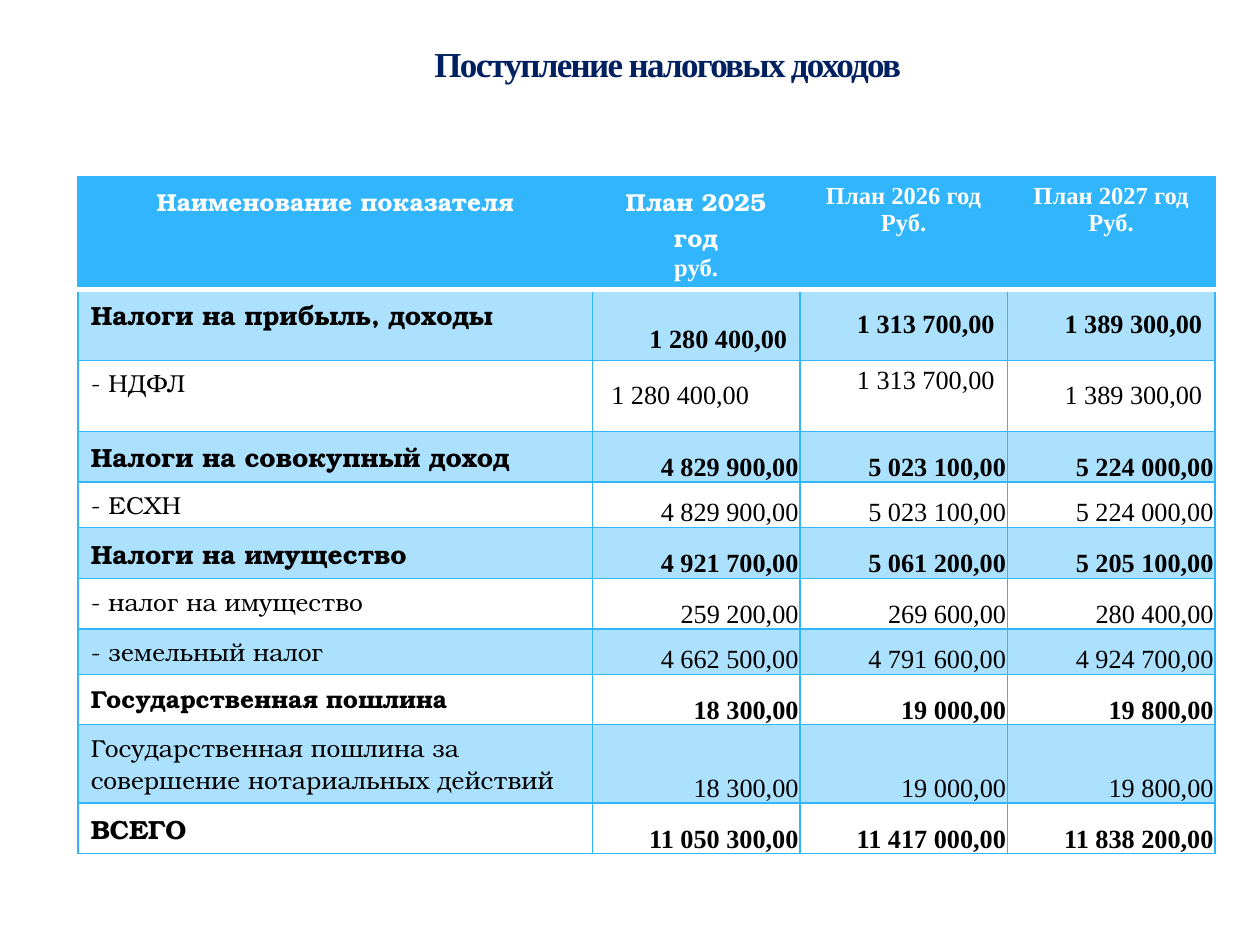
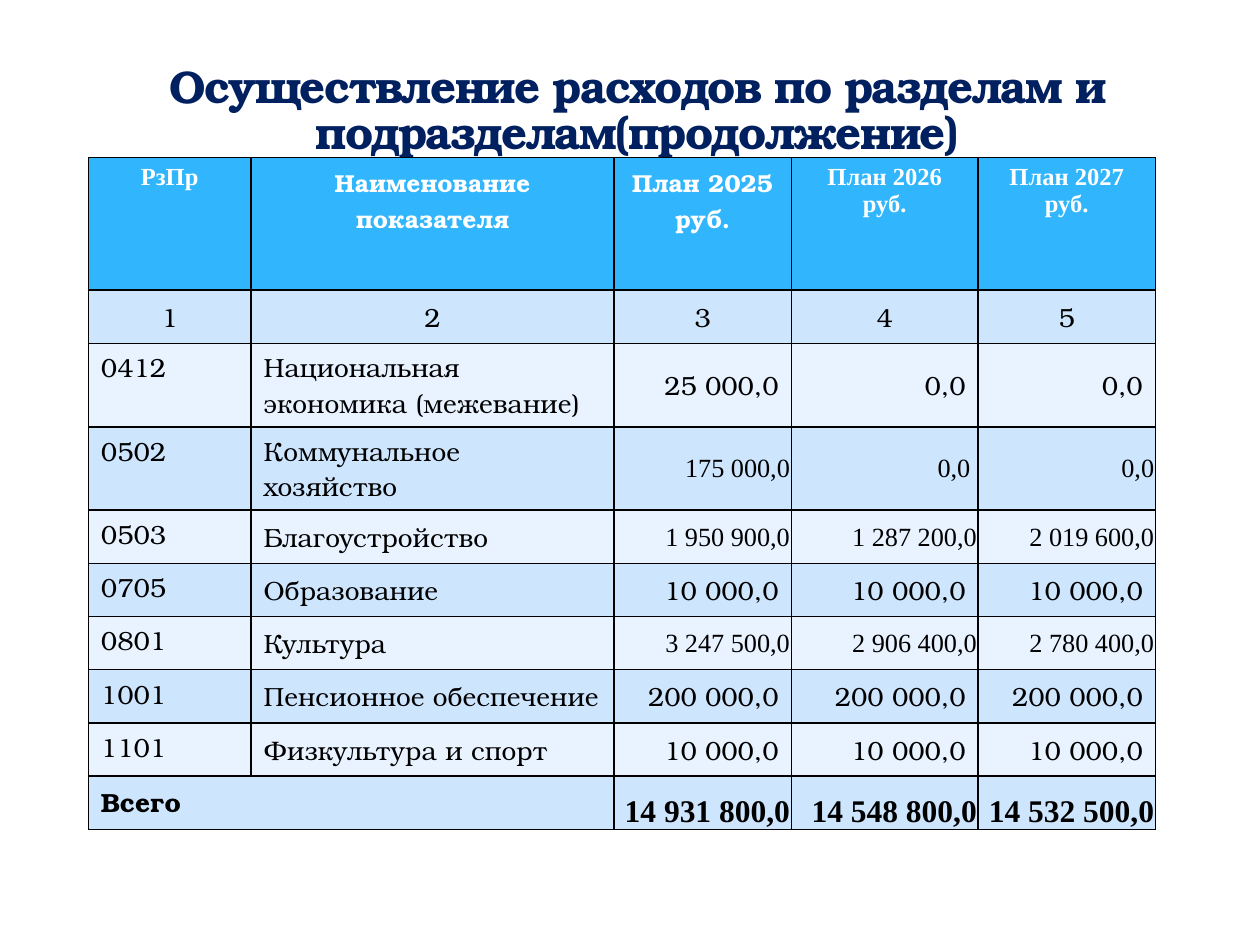
from dataclasses import dataclass, replace

from lxml import etree
from pptx import Presentation
from pptx.dml.color import RGBColor
from pptx.enum import text
from pptx.oxml import ns
from pptx.util import Pt

SERIF, BOOK = "Times New Roman", "TeX Gyre Bonum"
NAVY, SKY, WHITE, BLACK = "002060", "31B6FD", "FFFFFF", "000000"
PALE, PALER = "CEE5FE", "E8F3FF"
LEFT, CENTER, RIGHT = text.PP_ALIGN.LEFT, text.PP_ALIGN.CENTER, text.PP_ALIGN.RIGHT
TOP, MIDDLE, BOTTOM = text.MSO_ANCHOR.TOP, text.MSO_ANCHOR.MIDDLE, text.MSO_ANCHOR.BOTTOM
ROOMY = (7.2, 3.6, 7.2, 3.6)
TIGHT = (0.72, 0.72, 0.72, 0)


@dataclass(frozen=True)
class Style:
    font: str = BOOK
    size: float = 15
    bold: bool = False
    colour: str = BLACK
    align: text.PP_ALIGN = LEFT
    anchor: text.MSO_ANCHOR = TOP
    margins: tuple = ROOMY


@dataclass(frozen=True)
class Entry:
    words: str
    style: Style


@dataclass(frozen=True)
class Row:
    height: float
    entries: list[Entry]
    fill: str | None = None
    alpha: int = 100


@dataclass(frozen=True)
class Title:
    words: str
    box: tuple
    font: str
    size: float
    anchor: text.MSO_ANCHOR
    spacing: float


HEADER = Style(size=14, bold=True, colour=WHITE, align=CENTER)
SERIF_HEADER = replace(HEADER, font=SERIF)
LABEL = Style()
MIDDLE_LABEL = Style(anchor=MIDDLE)
NUMBER = Style(align=RIGHT, anchor=MIDDLE)
SERIF_NUMBER = replace(NUMBER, font=SERIF)
TIGHT_NUMBER = replace(SERIF_NUMBER, margins=TIGHT)
LOW_NUMBER = replace(TIGHT_NUMBER, anchor=BOTTOM)


def rgb(colour: str) -> RGBColor:
    return RGBColor.from_string(colour)


def add_colour(parent, colour: str) -> None:
    solid = etree.SubElement(parent, ns.qn("a:solidFill"))
    etree.SubElement(solid, ns.qn("a:srgbClr"), val=colour)


def set_borders(cell, sides: dict) -> None:
    """Put the edge lines ahead of the cell's fill, as the schema asks."""
    properties = cell._tc.get_or_add_tcPr()
    for index, (side, (colour, width)) in enumerate(sides.items()):
        line = etree.Element(ns.qn(f"a:ln{side}"), w=str(Pt(width)))
        add_colour(line, colour)
        properties.insert(index, line)


def set_fill(cell, row: Row) -> None:
    if row.fill is None:
        cell.fill.background()
        return
    cell.fill.solid()
    cell.fill.fore_color.rgb = rgb(row.fill)
    if row.alpha < 100:
        tone = cell._tc.tcPr.find(".//" + ns.qn("a:srgbClr"))
        etree.SubElement(tone, ns.qn("a:alpha"), val=str(row.alpha * 1000))


def write_cell(cell, entry: Entry) -> None:
    style = entry.style
    cell.vertical_anchor = style.anchor
    (cell.margin_left, cell.margin_top,
     cell.margin_right, cell.margin_bottom) = map(Pt, style.margins)
    cell.text = entry.words
    for index, para in enumerate(cell.text_frame.paragraphs):
        para.alignment = style.align
        para.font.name = SERIF if index else style.font
        para.font.size = Pt(style.size)
        para.font.bold = style.bold
        para.font.color.rgb = rgb(style.colour)


def add_grid(page, left: float, top: float, widths: list[float], rows: list[Row],
             line: str, header_rule: tuple):
    height = sum(row.height for row in rows)
    grid = page.shapes.add_table(len(rows), len(widths), Pt(left), Pt(top),
                                 Pt(sum(widths)), Pt(height)).table
    grid.first_row = grid.horz_banding = False
    for column, width in zip(grid.columns, widths):
        column.width = Pt(width)
    for index, row in enumerate(rows):
        grid.rows[index].height = Pt(row.height)
        sides = dict.fromkeys("LRTB", (line, 1))
        if index < 2:
            sides["T" if index else "B"] = header_rule
        for column in range(len(widths)):
            cell = grid.cell(index, column)
            set_fill(cell, row)
            set_borders(cell, sides)
            if column < len(row.entries) and row.entries[column]:
                write_cell(cell, row.entries[column])
    return grid


def add_page(deck, title: Title):
    page = deck.slides.add_slide(deck.slide_layouts[5])
    box = page.shapes.title
    box.left, box.top, box.width, box.height = map(Pt, title.box)
    frame = box.text_frame
    frame.auto_size = text.MSO_AUTO_SIZE.NONE
    frame.word_wrap = True
    frame.vertical_anchor = title.anchor
    frame.margin_top = frame.margin_bottom = 0
    para = frame.paragraphs[0]
    para.alignment = CENTER
    para.line_spacing = title.spacing
    para.font.name, para.font.size, para.font.bold = title.font, Pt(title.size), True
    para.font.color.rgb = rgb(NAVY)
    span = para.add_run()
    span.text = title.words
    span._r.get_or_add_rPr().set("spc", "-100")
    return page


def entries(label: str, label_style: Style, values: str, style: Style) -> list[Entry]:
    """A label followed by numbers that are separated by bars."""
    return [Entry(label, label_style)] + [Entry(v, style) for v in values.split("|")]


def add_tax_income(deck) -> None:
    page = add_page(deck, Title("Поступление налоговых доходов", (118, 16.5, 527, 39.6),
                                SERIF, 20, MIDDLE, 1))
    rows = [Row(64.3, [Entry("Наименование показателя", HEADER),
                       Entry("План 2025 год\nруб.", HEADER),
                       Entry("План 2026 год\nРуб.", SERIF_HEADER),
                       Entry("План 2027 год\nРуб.", SERIF_HEADER)], SKY)]

    # Height, label, label size, bold, values
    lines = [
        (40.6, "Налоги на прибыль, доходы", 15, True, "1 280 400,00|1 313 700,00|1 389 300,00"),
        (40.6, "- НДФЛ", 14, False, "1 280 400,00|1 313 700,00|1 389 300,00"),
        (28.8, "Налоги на совокупный доход", 15, True, "4 829 900,00|5 023 100,00|5 224 000,00"),
        (25.8, "- ЕСХН", 14, False, "4 829 900,00|5 023 100,00|5 224 000,00"),
        (28.8, "Налоги на имущество", 15, True, "4 921 700,00|5 061 200,00|5 205 100,00"),
        (28.8, "- налог на имущество", 14, False, "259 200,00|269 600,00|280 400,00"),
        (25.8, "- земельный налог", 14, False, "4 662 500,00|4 791 600,00|4 924 700,00"),
        (28.8, "Государственная пошлина", 14, True, "18 300,00|19 000,00|19 800,00"),
        (44.6, "Государственная пошлина за совершение нотариальных действий", 14, False,
         "18 300,00|19 000,00|19 800,00"),
        (28.8, "ВСЕГО", 15, True, "11 050 300,00|11 417 000,00|11 838 200,00"),
    ]
    for index, (height, label, size, bold, values) in enumerate(lines):
        number = replace(SERIF_NUMBER if index < 2 else LOW_NUMBER, bold=bold)
        cells = entries(label, replace(LABEL, size=size, bold=bold), values, number)
        rows.append(Row(height, cells, None if index % 2 else SKY, 40))

    # Numbers of the first two lines that stand off the middle
    profit, personal = rows[1].entries, rows[2].entries
    profit[1] = replace(profit[1], style=replace(profit[1].style, anchor=BOTTOM))
    personal[1] = replace(personal[1], style=replace(personal[1].style,
                                                     margins=(7.2, 3.6, 29, 3.6)))
    personal[2] = replace(personal[2], style=replace(personal[2].style, anchor=TOP))
    add_grid(page, 44.7, 101, [293.8] + [118.6] * 3, rows, SKY, (WHITE, 3))


def add_spending(deck) -> None:
    page = add_page(deck, Title("Осуществление расходов по разделам и подразделам(продолжение)",
                                (87.8, 54.7, 553, 36), BOOK, 26, BOTTOM, 0.84))
    rows = [
        Row(75.8, [Entry("РзПр", SERIF_HEADER),
                   Entry("Наименование показателя", HEADER),
                   Entry("План 2025 руб.", HEADER),
                   Entry("План 2026 руб.", SERIF_HEADER),
                   Entry("План 2027 руб.", SERIF_HEADER)], SKY),
        Row(30.4, [Entry(str(n), Style(align=CENTER, anchor=MIDDLE)) for n in range(1, 6)], PALE),
    ]

    # Height, code, section, values, number style
    lines = [
        (47.7, "0412", "Национальная экономика (межевание)", "25 000,0|0,0|0,0", NUMBER),
        (47.7, "0502", "Коммунальное хозяйство", "175 000,0|0,0|0,0", TIGHT_NUMBER),
        (30.4, "0503", "Благоустройство", "1 950 900,0|1 287 200,0|2 019 600,0", TIGHT_NUMBER),
        (30.4, "0705", "Образование", "10 000,0|10 000,0|10 000,0", NUMBER),
        (30.4, "0801", "Культура", "3 247 500,0|2 906 400,0|2 780 400,0", TIGHT_NUMBER),
        (30.4, "1001", "Пенсионное обеспечение", "200 000,0|200 000,0|200 000,0", NUMBER),
        (30.4, "1101", "Физкультура и спорт", "10 000,0|10 000,0|10 000,0", NUMBER),
    ]
    for index, (height, code, section, values, style) in enumerate(lines):
        cells = [Entry(code, LABEL)] + entries(section, MIDDLE_LABEL, values, style)
        rows.append(Row(height, cells, PALE if index % 2 else PALER))
    housing = rows[3].entries
    housing[3] = replace(housing[3], style=replace(TIGHT_NUMBER, margins=(0.72, 0.72, 4.5, 0)))

    # Total line, whose label spans the first two columns
    total = entries("Всего", replace(LABEL, bold=True), "14 931 800,0|14 548 800,0|14 532 500,0",
                    replace(LOW_NUMBER, size=18, bold=True))
    total.insert(1, None)
    rows.append(Row(30.4, total, PALE))
    grid = add_grid(page, 50.5, 90, [93, 207.4, 101.3, 106.8, 101.3], rows, BLACK, (BLACK, 1))
    last = len(rows) - 1
    grid.cell(last, 0).merge(grid.cell(last, 1))


def main() -> None:
    deck = Presentation()
    deck.slide_width, deck.slide_height = Pt(720), Pt(540)
    add_tax_income(deck)
    add_spending(deck)
    deck.save("out.pptx")


if __name__ == "__main__":
    main()
